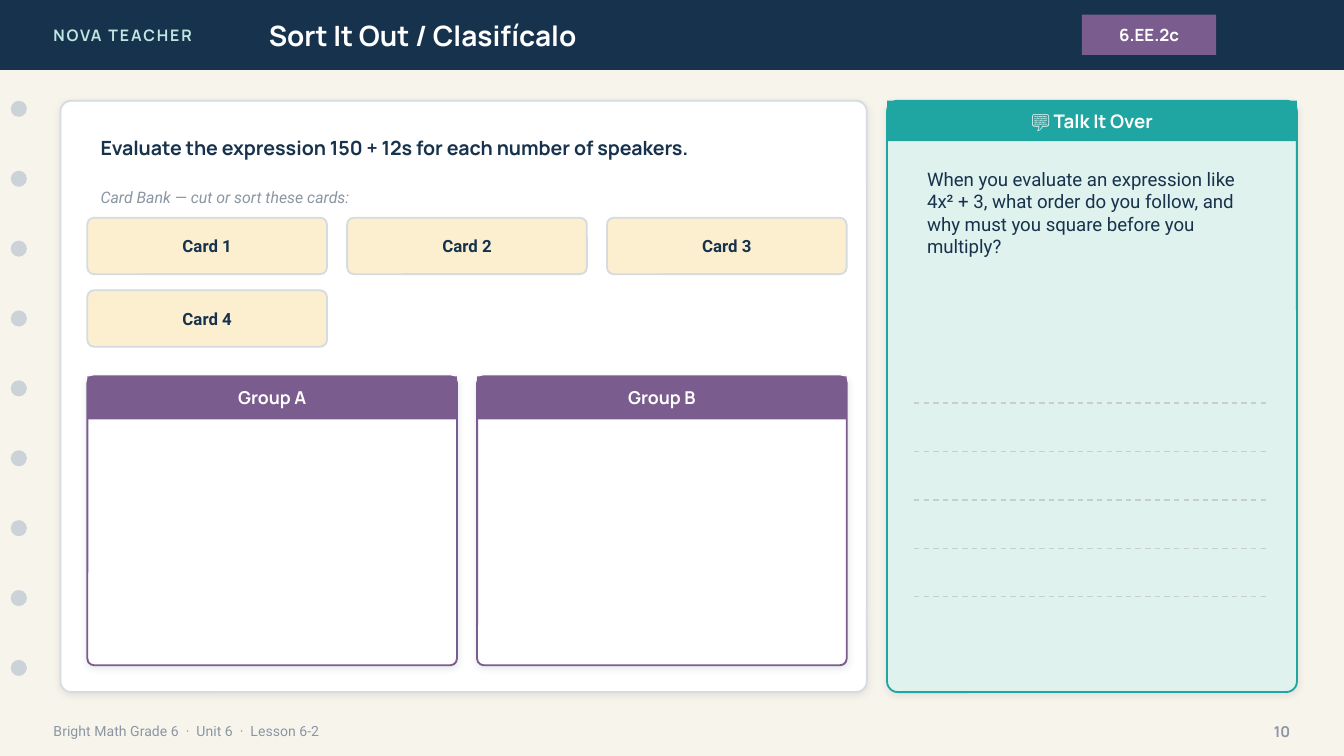
from lxml.etree import SubElement
from pptx import Presentation
from pptx.dml.color import RGBColor
from pptx.enum.dml import MSO_LINE
from pptx.enum.shapes import MSO_CONNECTOR, MSO_SHAPE
from pptx.enum.text import MSO_ANCHOR, MSO_AUTO_SIZE, PP_ALIGN
from pptx.oxml.ns import qn
from pptx.util import Inches, Pt

# Content
BRAND = "NOVA TEACHER"
TITLE = "Sort It Out / Clasifícalo"
CODE = "6.EE.2c"
TASK = "Evaluate the expression 150 + 12s for each number of speakers."
HINT = "Card Bank — cut or sort these cards:"
CARDS = ["Card 1", "Card 2", "Card 3", "Card 4"]
GROUPS = ["Group A", "Group B"]
TALK = "💬 Talk It Over"
PROMPT = ("When you evaluate an expression like 4x² + 3, what order do you "
          "follow, and why must you square before you multiply?")
FOOTER = "Bright Math Grade 6  ·  Unit 6  ·  Lesson 6-2"
PAGE = "10"

# Style
NAVY = RGBColor(0x17, 0x32, 0x4D)
CREAM = RGBColor(0xF7, 0xF4, 0xEC)
MINT = RGBColor(0xBF, 0xE6, 0xE2)
WHITE = RGBColor(0xFF, 0xFF, 0xFF)
PLUM = RGBColor(0x7A, 0x5C, 0x8E)
HOLE = RGBColor(0xCB, 0xD3, 0xD9)
GRAY = RGBColor(0x8A, 0x96, 0xA3)
EDGE = RGBColor(0xD6, 0xDB, 0xDF)
SAND = RGBColor(0xFB, 0xEF, 0xD0)
TEAL = RGBColor(0x1F, 0xA6, 0xA2)
PALE = RGBColor(0xDF, 0xF2, 0xEE)
RULE = RGBColor(0xC7, 0xCD, 0xD2)
HEAD, BODY = "Manrope", "Roboto"
LEFT, MID, RIGHT = PP_ALIGN.LEFT, PP_ALIGN.CENTER, PP_ALIGN.RIGHT
RECT, OVAL = MSO_SHAPE.RECTANGLE, MSO_SHAPE.OVAL
ROUND = MSO_SHAPE.ROUNDED_RECTANGLE

# Slide, 16 by 9
deck = Presentation()
deck.slide_width, deck.slide_height = Inches(10), Inches(10 * 9 / 16)
slide = deck.slides.add_slide(deck.slide_layouts[5])
slide.background.fill.solid()
slide.background.fill.fore_color.rgb = CREAM
shapes = slide.shapes


def write(shape, text, size=10, font=HEAD, color=NAVY, bold=True,
          italic=False, align=LEFT, anchor=MSO_ANCHOR.MIDDLE, gap=0):
    frame = shape.text_frame
    frame.word_wrap = True
    frame.auto_size = MSO_AUTO_SIZE.NONE
    frame.vertical_anchor = anchor
    para = frame.paragraphs[0]
    para.alignment = align
    run = para.add_run()
    run.text = text
    face = run.font
    face.size, face.name, face.color.rgb = Pt(size), font, color
    face.bold, face.italic = bold, italic
    if gap:
        run._r.get_or_add_rPr().set("spc", str(gap * 100))


def label(box, text, **style):
    write(shapes.add_textbox(*map(Inches, box)), text, **style)


def block(kind, box, fill, line=None, radius=0, shade=False):
    shape = shapes.add_shape(kind, *map(Inches, box))
    shape.fill.solid()
    shape.fill.fore_color.rgb = fill
    if line is None:
        shape.line.fill.background()
    else:
        shape.line.color.rgb = line
        shape.line.width = Pt(1)
    if kind == ROUND:
        shape.adjustments[0] = radius / min(box[2:])
    shape.shadow.inherit = False
    if shade:
        effects = shape._element.spPr.find(qn("a:effectLst"))
        cast = SubElement(effects, qn("a:outerShdw"), blurRad=str(Pt(4)),
                          dist=str(Pt(1)), dir="5400000", algn="bl",
                          rotWithShape="0")
        tint = SubElement(cast, qn("a:srgbClr"), val="1C2E42")
        SubElement(tint, qn("a:alpha"), val="10000")
    return shape


def panel(box, fill, color, radius, bar, text, size):
    x, y, wide, _ = box
    block(ROUND, box, fill, color, radius, shade=True)
    write(block(RECT, (x, y, wide, bar), color), text, size=size,
          color=WHITE, align=MID)


# Header
block(RECT, (0, 0, 10, 0.52), NAVY)
label((0.3, 0, 2.4, 0.52), BRAND, size=8.5, color=MINT, gap=1)
title = shapes.title
title.left, title.top = Inches(1.9), Inches(0)
title.width, title.height = Inches(5.6), Inches(0.52)
write(title, TITLE, size=15, color=WHITE)
shapes._spTree.append(title._element)  # bring in front of the header bar
write(block(RECT, (8.05, 0.11, 1, 0.3), PLUM), CODE, size=9, color=WHITE,
      align=MID)

# Binder holes
for i in range(9):
    block(OVAL, (0.08, 0.75 + i * 0.52, 0.12, 0.12), HOLE)

# Footer
label((0.3, 5.3, 7, 0.28), FOOTER, size=7.5, font=BODY, color=GRAY, bold=False)
label((9.2, 5.3, 0.5, 0.28), PAGE, size=8, color=GRAY, align=RIGHT)

# Sorting sheet
block(ROUND, (0.45, 0.75, 6, 4.4), WHITE, EDGE, 0.08, shade=True)
label((0.65, 0.9, 5.6, 0.4), TASK, size=10.5)
label((0.65, 1.35, 5.6, 0.24), HINT, size=8.5, font=BODY, color=GRAY,
      bold=False, italic=True)

# Cards, three to a row, and groups share the same inner width
START, INNER, GAP = 0.65, 5.65, 0.15
wide = (INNER - 2 * GAP) / 3
for i, name in enumerate(CARDS):
    row, col = divmod(i, 3)
    box = (START + col * (wide + GAP), 1.62 + row * 0.54, wide, 0.42)
    write(block(ROUND, box, SAND, EDGE, 0.05), name, size=9, font=BODY,
          align=MID)

wide = (INNER - GAP) / 2
for i, name in enumerate(GROUPS):
    panel((START + i * (wide + GAP), 2.8, wide, 2.15), WHITE, PLUM, 0.05,
          0.32, name, 9.5)

# Talk panel with writing lines
panel((6.6, 0.75, 3.05, 4.4), PALE, TEAL, 0.08, 0.3, TALK, 10)
label((6.8, 1.2, 2.7, 1.5), PROMPT, font=BODY, bold=False,
      anchor=MSO_ANCHOR.TOP)
for i in range(5):
    y = Inches(3 + i * 0.36)
    rule = shapes.add_connector(MSO_CONNECTOR.STRAIGHT, Inches(6.8), y,
                                Inches(9.45), y)
    rule.line.color.rgb = RULE
    rule.line.width = Pt(0.75)
    rule.line.dash_style = MSO_LINE.DASH
    SubElement(rule._element.spPr, qn("a:effectLst"))

deck.save("out.pptx")
